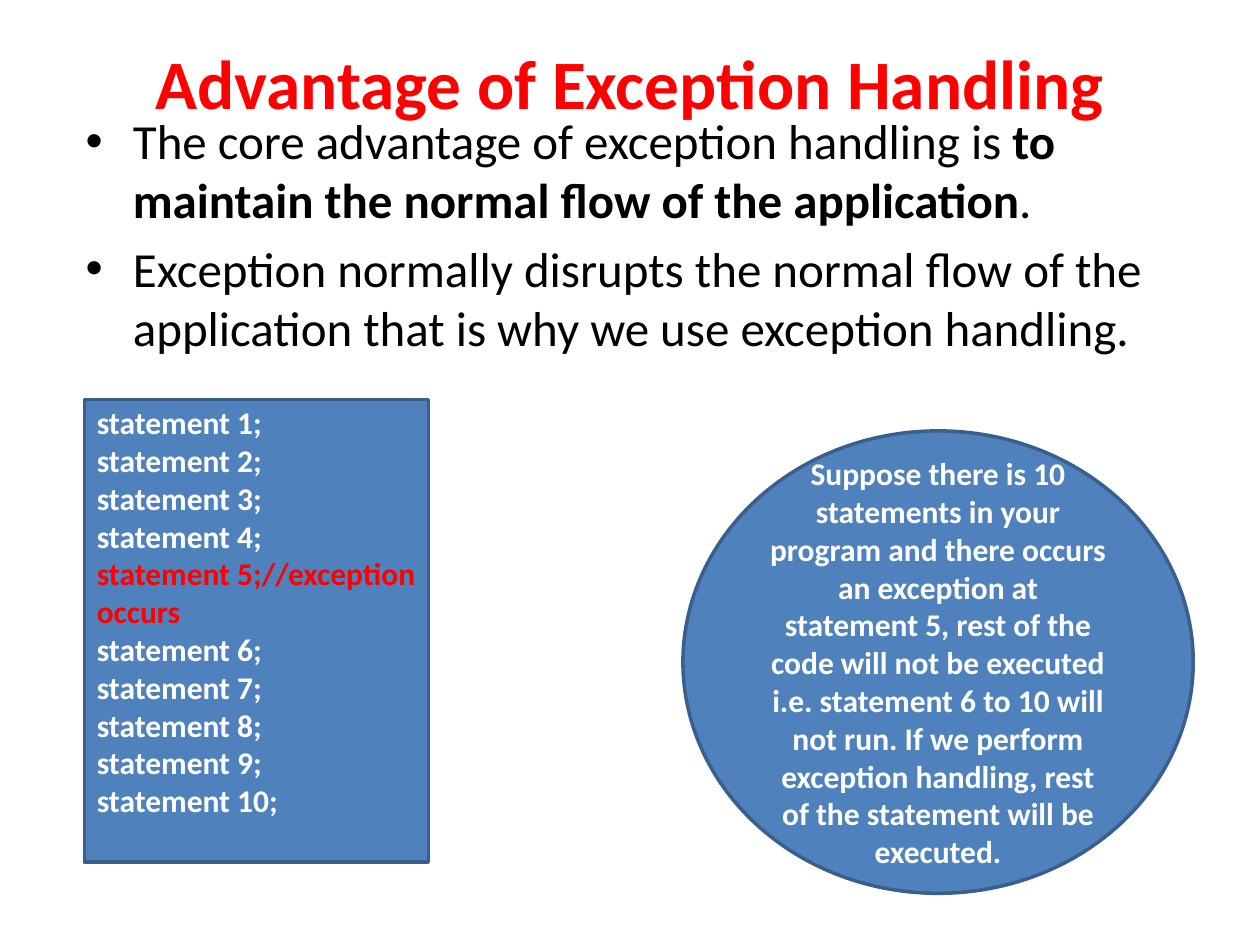
"""Build the slide on the advantage of exception handling."""
from typing import NamedTuple

from pptx import Presentation
from pptx import util as u
from pptx.dml import color
from pptx.enum import shapes, text

FONT = "Calibri"
RED, BLACK, WHITE = "FF0000", "000000", "FFFFFF"
BLUE, EDGE = "4F81BD", "3A5F8C"
FIRST, LAST, FAULT = 1, 10, 5


class Run(NamedTuple):
    words: str
    size: float
    hue: str
    bold: bool = False


class Panel(NamedTuple):
    kind: shapes.MSO_SHAPE
    box: tuple[float, float, float, float]
    lines: list[list[Run]]
    align: text.PP_ALIGN
    anchor: text.MSO_ANCHOR
    inset: float


def rgb(code: str) -> color.RGBColor:
    return color.RGBColor.from_string(code)


def place(shape, box: tuple[float, float, float, float]) -> None:
    shape.left, shape.top, shape.width, shape.height = map(u.Inches, box)


def write(frame, lines: list[list[Run]], align: text.PP_ALIGN, gap: float = 0) -> None:
    frame.word_wrap = True
    frame.auto_size = text.MSO_AUTO_SIZE.NONE
    for i, line in enumerate(lines):
        para = frame.add_paragraph() if i else frame.paragraphs[0]
        para.alignment = align
        para.space_before = u.Pt(gap if i else 0)
        for part in line:
            run = para.add_run()
            run.text = part.words
            font = run.font
            font.name, font.size, font.bold = FONT, u.Pt(part.size), part.bold
            font.color.rgb = rgb(part.hue)


def draw(slide, panel: Panel) -> None:
    shape = slide.shapes.add_shape(panel.kind, *map(u.Inches, panel.box))
    shape.shadow.inherit = False
    shape.fill.solid()
    shape.fill.fore_color.rgb = rgb(BLUE)
    shape.line.color.rgb = rgb(EDGE)
    shape.line.width = u.Pt(2)
    frame = shape.text_frame
    frame.vertical_anchor = panel.anchor
    frame.margin_top = u.Inches(panel.inset)
    write(frame, panel.lines, panel.align)


def step(n: int) -> list[Run]:
    note = "//exception occurs" if n == FAULT else ""
    return [Run(f"statement {n};{note}", 18, RED if n == FAULT else WHITE, True)]


TITLE = [[Run("Advantage of Exception Handling", 39.6, RED, True)]]
POINTS = [
    [
        Run("The core advantage of exception handling is ", 28, BLACK),
        Run("to maintain the normal flow of the application", 28, BLACK, True),
        Run(".", 28, BLACK),
    ],
    [Run("Exception normally disrupts the normal flow of the application "
         "that is why we use exception handling.", 28, BLACK)],
]
STORY = [[Run(
    "Suppose there is 10 statements in your program and there occurs an "
    "exception at statement 5, rest of the code will not be executed i.e. "
    "statement 6 to 10 will not run. If we perform exception handling, rest "
    "of the statement will be executed.", 18, WHITE, True)]]
PANELS = [
    Panel(shapes.MSO_SHAPE.RECTANGLE, (0.67, 3.17, 2.73, 3.67),
          [step(n) for n in range(FIRST, LAST + 1)],
          text.PP_ALIGN.LEFT, text.MSO_ANCHOR.TOP, 0.03),
    Panel(shapes.MSO_SHAPE.OVAL, (5.42, 3.42, 4.05, 3.67), STORY,
          text.PP_ALIGN.CENTER, text.MSO_ANCHOR.MIDDLE, 0.05),
]


def main() -> None:
    deck = Presentation()
    deck.slide_width, deck.slide_height = u.Inches(10), u.Inches(7.5)
    slide = deck.slides.add_slide(deck.slide_layouts[1])
    title, body = slide.placeholders
    place(title, (0.5, 0.3, 9, 0.7))
    write(title.text_frame, TITLE, text.PP_ALIGN.CENTER)
    place(body, (0.58, 0.83, 8.73, 6.21))
    write(body.text_frame, POINTS, text.PP_ALIGN.LEFT, 5.6)
    for panel in PANELS:
        draw(slide, panel)
    deck.save("out.pptx")


if __name__ == "__main__":
    main()
